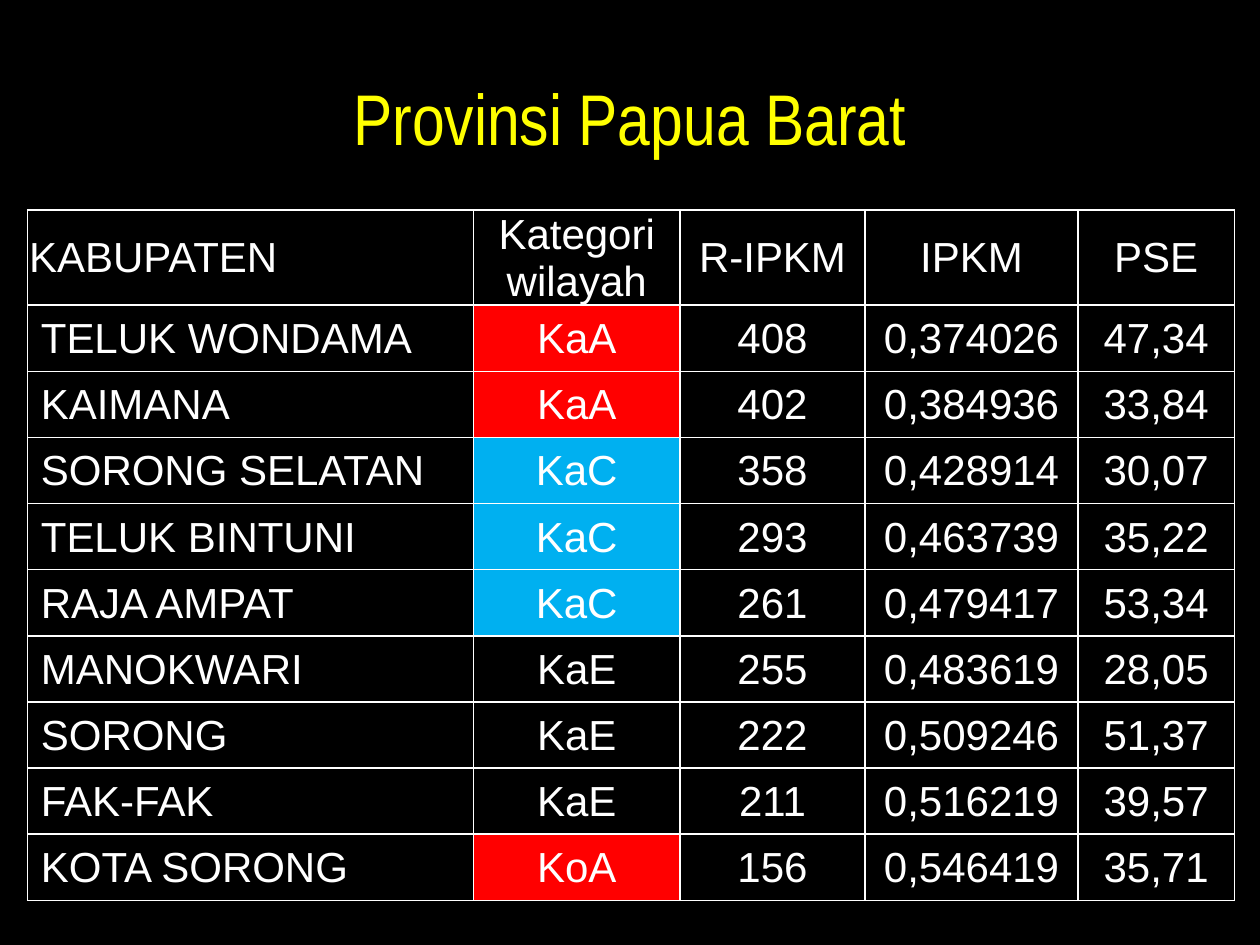
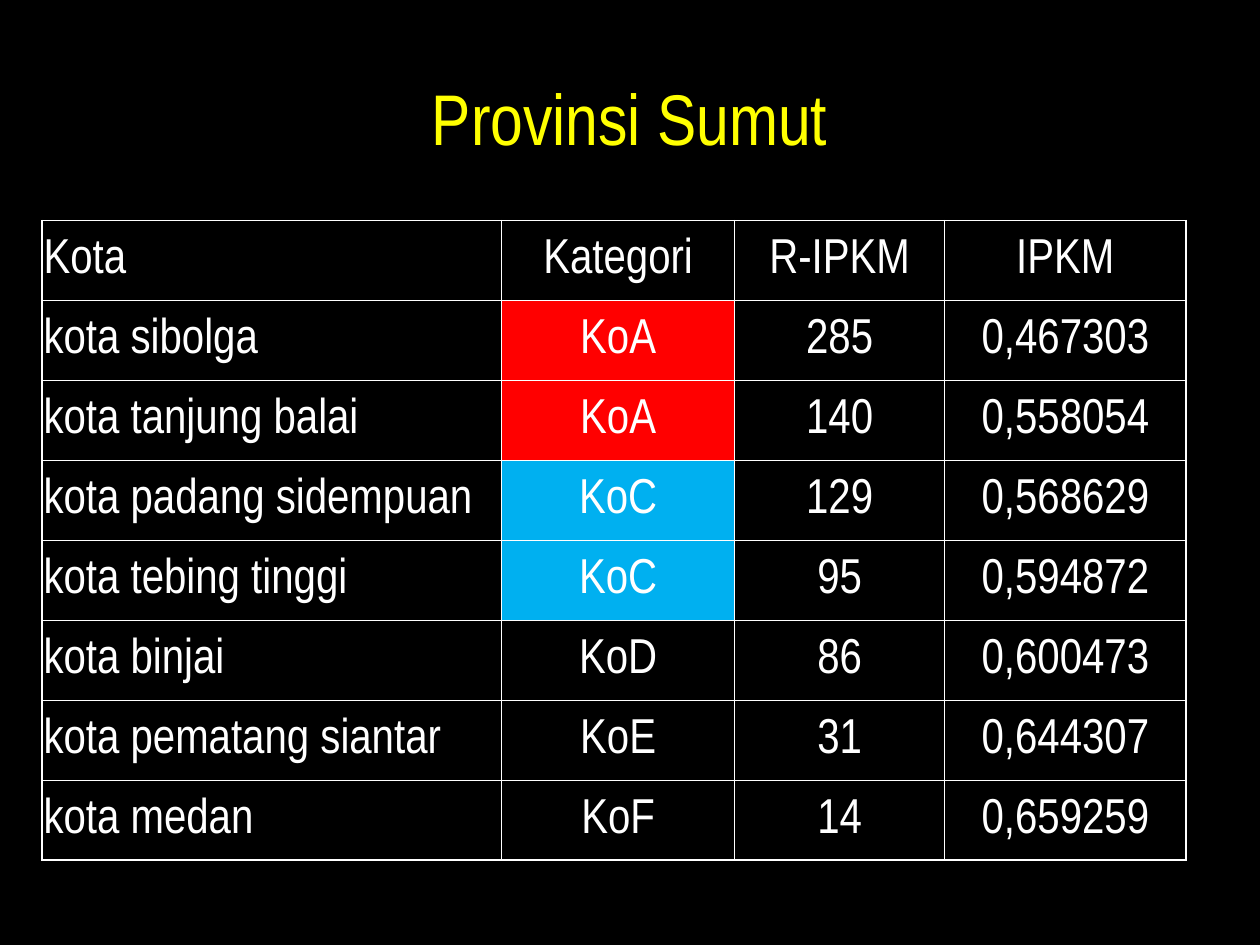
from lxml import etree
from pptx import Presentation
from pptx.dml.color import RGBColor
from pptx.enum.text import MSO_ANCHOR, MSO_AUTO_SIZE, PP_ALIGN
from pptx.oxml.ns import qn
from pptx.util import Pt

LEFT, CENTER = PP_ALIGN.LEFT, PP_ALIGN.CENTER
MIDDLE = MSO_ANCHOR.MIDDLE
NO_AUTOFIT = MSO_AUTO_SIZE.NONE

BLACK = RGBColor(0x00, 0x00, 0x00)
WHITE = RGBColor(0xFF, 0xFF, 0xFF)
YELLOW = RGBColor(0xFF, 0xFF, 0x00)
RED = RGBColor(0xFF, 0x00, 0x00)
BLUE = RGBColor(0x00, 0xB0, 0xF0)

CATEGORY_COLORS = {"KaA": RED, "KoA": RED, "KaC": BLUE, "KoC": BLUE}
BORDER_SIDES = ("a:lnL", "a:lnR", "a:lnT", "a:lnB")
TITLE_ONLY_LAYOUT = 5

PAPUA_BARAT = [
    ("KABUPATEN", "Kategori wilayah", "R-IPKM", "IPKM", "PSE"),
    ("TELUK WONDAMA", "KaA", "408", "0,374026", "47,34"),
    ("KAIMANA", "KaA", "402", "0,384936", "33,84"),
    ("SORONG SELATAN", "KaC", "358", "0,428914", "30,07"),
    ("TELUK BINTUNI", "KaC", "293", "0,463739", "35,22"),
    ("RAJA AMPAT", "KaC", "261", "0,479417", "53,34"),
    ("MANOKWARI", "KaE", "255", "0,483619", "28,05"),
    ("SORONG", "KaE", "222", "0,509246", "51,37"),
    ("FAK-FAK", "KaE", "211", "0,516219", "39,57"),
    ("KOTA SORONG", "KoA", "156", "0,546419", "35,71"),
]

SUMUT = [
    ("Kota", "Kategori", "R-IPKM", "IPKM"),
    ("kota sibolga", "KoA", "285", "0,467303"),
    ("kota tanjung balai", "KoA", "140", "0,558054"),
    ("kota padang sidempuan", "KoC", "129", "0,568629"),
    ("kota tebing tinggi", "KoC", "95", "0,594872"),
    ("kota binjai", "KoD", "86", "0,600473"),
    ("kota pematang siantar", "KoE", "31", "0,644307"),
    ("kota medan", "KoF", "14", "0,659259"),
]


class Deck:
    title_font = "Arial Narrow"
    title_size = 41
    cell_margin = 0.9
    border_width = 1

    def __init__(self):
        self.presentation = Presentation()
        self.presentation.slide_width = Pt(720)
        self.presentation.slide_height = Pt(540)
        background = self.presentation.slide_master.background.fill
        background.solid()
        background.fore_color.rgb = BLACK
        self.slide = None

    def add_slide(self, title):
        layout = self.presentation.slide_layouts[TITLE_ONLY_LAYOUT]
        self.slide = self.presentation.slides.add_slide(layout)
        shape = self.slide.shapes.title
        shape.left, shape.top = Pt(36), Pt(21.6)
        shape.width, shape.height = Pt(648), Pt(90)
        frame = shape.text_frame
        frame.auto_size = NO_AUTOFIT
        frame.vertical_anchor = MIDDLE
        self.add_text(frame, title, self.title_font, self.title_size, YELLOW, CENTER)

    def add_text(self, frame, text, font, size, color, alignment):
        paragraph = frame.paragraphs[0]
        paragraph.alignment = alignment
        run = paragraph.add_run()
        run.text = text
        run.font.name = font
        run.font.size = Pt(size)
        run.font.color.rgb = color

    def add_borders(self, cell):
        properties = cell._tc.get_or_add_tcPr()
        for side in BORDER_SIDES:
            line = etree.SubElement(properties, qn(side), w=str(Pt(self.border_width)))
            fill = etree.SubElement(line, qn("a:solidFill"))
            etree.SubElement(fill, qn("a:srgbClr"), val=str(WHITE))

    def format_cell(self, cell, text, font, size, alignment, indent):
        cell.margin_left = Pt(self.cell_margin + indent)
        cell.margin_right = cell.margin_top = Pt(self.cell_margin)
        cell.margin_bottom = 0
        cell.vertical_anchor = MIDDLE
        self.add_borders(cell)
        if text in CATEGORY_COLORS:
            cell.fill.solid()
            cell.fill.fore_color.rgb = CATEGORY_COLORS[text]
        else:
            cell.fill.background()
        self.add_text(cell.text_frame, text, font, size, WHITE, alignment)

    def add_table(self, rows, left, top, widths, row_height, font, size, name_indent=0):
        shape = self.slide.shapes.add_table(
            len(rows), len(widths), Pt(left), Pt(top),
            Pt(sum(widths)), Pt(row_height * len(rows)))
        table = shape.table
        table.first_row = False
        table.horz_banding = False
        for column, width in zip(table.columns, widths):
            column.width = Pt(width)
        for row_index, values in enumerate(rows):
            table.rows[row_index].height = Pt(row_height)
            for column_index, text in enumerate(values):
                is_name = column_index == 0
                indent = name_indent if is_name and row_index > 0 else 0
                self.format_cell(table.cell(row_index, column_index), text, font, size,
                                 LEFT if is_name else CENTER, indent)


def main():
    deck = Deck()
    deck.add_slide("Provinsi Papua Barat")
    deck.add_table(PAPUA_BARAT, left=15.8, top=120, widths=(254.8, 118, 105.8, 121.7, 89.3),
                   row_height=37.8, font="Arial", size=24, name_indent=6.67)
    deck.add_slide("Provinsi Sumut")
    deck.add_table(SUMUT, left=24, top=126, widths=(262.6, 133.2, 120, 138),
                   row_height=45.72, font="Arial Narrow", size=28)
    deck.presentation.save("out.pptx")


if __name__ == "__main__":
    main()
